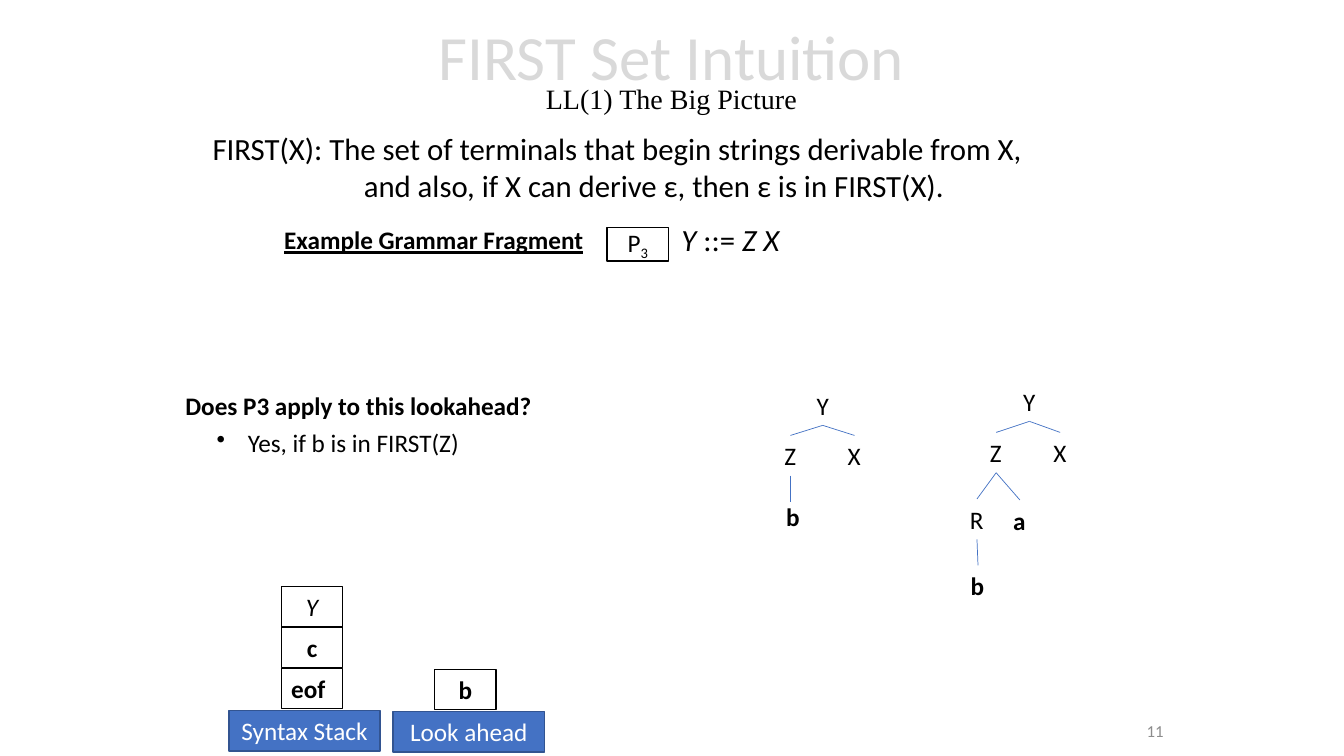
from dataclasses import dataclass

from lxml import etree
from pptx import Presentation
from pptx.dml.color import RGBColor
from pptx.enum.shapes import MSO_CONNECTOR, MSO_SHAPE
from pptx.enum.text import MSO_ANCHOR, MSO_AUTO_SIZE, PP_ALIGN
from pptx.oxml.ns import qn
from pptx.util import Inches, Pt

STRAIGHT = MSO_CONNECTOR.STRAIGHT
RECT = MSO_SHAPE.RECTANGLE
TOP, MIDDLE = MSO_ANCHOR.TOP, MSO_ANCHOR.MIDDLE
FIT, NO_FIT = MSO_AUTO_SIZE.SHAPE_TO_FIT_TEXT, MSO_AUTO_SIZE.NONE
LEFT, CENTER, RIGHT = PP_ALIGN.LEFT, PP_ALIGN.CENTER, PP_ALIGN.RIGHT
SIDE_TOP, SIDE_BOTTOM = 0, 2
ROW = 0.4


@dataclass(frozen=True)
class Theme:
    font: str = "Calibri"
    serif: str = "Times New Roman"
    ink: str = "000000"
    paper: str = "FFFFFF"
    accent: str = "4472C4"
    accent_dark: str = "325491"
    faded: str = "D9D9D9"
    muted: str = "8C8C8C"
    title: float = 45
    subtitle: float = 20
    lead: float = 22
    body: float = 18
    small: float = 12


class Deck:
    def __init__(self, theme):
        self.theme = theme
        self.prs = Presentation()
        self.prs.slide_width, self.prs.slide_height = Inches(13.33), Inches(7.5)

    def add_slide(self):
        self.slide = self.prs.slides.add_slide(self.prs.slide_layouts[5])

    def style(self, font, size, color, name=None, bold=False, italic=False):
        font.name, font.size = name or self.theme.font, Pt(size)
        font.color.rgb = RGBColor.from_string(color)
        font.bold, font.italic = bold, italic

    def title(self, heading, subheading, at):
        t = self.theme
        sp = self.slide.shapes.title
        sp.left, sp.top, sp.width, sp.height = map(Inches, at)
        tf = sp.text_frame
        tf.auto_size, tf.vertical_anchor = NO_FIT, MIDDLE
        p = tf.paragraphs[0]
        p.alignment, p.line_spacing = CENTER, 0.7
        r = p.add_run()
        r.text = heading
        self.style(r.font, t.title, t.faded)
        p.add_line_break()
        r = p.add_run()
        r.text = subheading
        self.style(r.font, t.subtitle, t.ink, t.serif)

    def text(self, text, at, size=None, color=None, bold=False, italic=False,
             align=LEFT, anchor=TOP, wrap=False, fit=True):
        t = self.theme
        sp = self.slide.shapes.add_textbox(*map(Inches, at))
        tf = sp.text_frame
        tf.text, tf.word_wrap, tf.vertical_anchor = text, wrap, anchor
        tf.auto_size = FIT if fit else NO_FIT
        for p in tf.paragraphs:
            p.alignment = align
            self.style(p.font, size or t.body, color or t.ink, bold=bold, italic=italic)
        return sp

    def bullet(self, text, at, indent):
        p = self.text(text, at).text_frame.paragraphs[0]
        pPr = p._p.get_or_add_pPr()
        pPr.set("marL", str(Inches(indent)))
        pPr.set("indent", str(-Inches(indent)))
        bullet = etree.Element(qn("a:buChar"), char="•")
        pPr.insert(0, bullet)

    def box(self, text, at, fill=None, line=None, color=None, bold=False,
            italic=False, align=CENTER, anchor=MIDDLE):
        t = self.theme
        sp = self.slide.shapes.add_shape(RECT, *map(Inches, at))
        sp.shadow.inherit = False
        sp.fill.solid()
        sp.fill.fore_color.rgb = RGBColor.from_string(fill or t.paper)
        sp.line.color.rgb = RGBColor.from_string(line or t.ink)
        sp.line.width = Pt(1)
        tf = sp.text_frame
        tf.text, tf.word_wrap, tf.vertical_anchor = text, True, anchor
        p = tf.paragraphs[0]
        p.alignment = align
        self.style(p.font, t.body, color or t.ink, bold=bold, italic=italic)
        return sp

    def branch(self, parent, child=None, end=(0, 0)):
        """Join a parent's bottom to a child's top, or to a free end point."""
        x, y = map(Inches, end)
        line = self.slide.shapes.add_connector(STRAIGHT, x, y, x, y)
        line.begin_connect(parent, SIDE_BOTTOM)
        if child is not None:
            line.end_connect(child, SIDE_TOP)
        line.line.color.rgb = RGBColor.from_string(self.theme.accent)
        line.line.width = Pt(0.5)
        etree.SubElement(line._element.spPr, qn("a:effectLst"))

    def tree(self, nodes, edges):
        """Draw symbols at (left, top, width); terminals are lower case and bold."""
        shapes = {symbol: self.text(symbol, (x, y, w, ROW), bold=symbol.islower())
                  for symbol, (x, y, w) in nodes.items()}
        for parent, child in edges:
            self.branch(shapes[parent], shapes[child])
        return shapes


def add_grammar(deck):
    t = deck.theme
    sp = deck.text("", (6.66, 2.14, 1.19, 0.47), size=t.lead)
    p = sp.text_frame.paragraphs[0]
    for part, italic in (("Y", True), (" ::= ", False), ("Z X", True)):
        r = p.add_run()
        r.text, r.font.italic = part, italic

    sp = deck.text("Example Grammar Fragment", (2.72, 2.18, 3.19, ROW), bold=True)
    sp.text_frame.paragraphs[0].font.underline = True

    sp = deck.box("P", (6.02, 2.26, 0.61, 0.33))
    r = sp.text_frame.paragraphs[0].add_run()
    r.text = "3"
    r._r.get_or_add_rPr().set("baseline", "-25000")


def add_parser_state(deck):
    t = deck.theme
    for label, x, y in (("Syntax Stack", 2.27, 7.05), ("Look ahead", 3.9, 7.06)):
        deck.box(label, (x, y, 1.5, ROW), t.accent, t.accent_dark, t.paper)
    for i, symbol in enumerate(("Y", "c")):
        deck.box(symbol, (2.79, 5.82 + i * ROW, 0.61, ROW),
                 bold=symbol.islower(), italic=symbol.isupper())
    deck.box("eof", (2.79, 6.63, 0.61, ROW), bold=True, align=LEFT, anchor=TOP)
    deck.box("b", (4.31, 6.64, 0.61, ROW), bold=True)


def add_trees(deck):
    short = deck.tree(
        {"Y": (8, 3.82, 0.32), "Z": (7.68, 4.32, 0.32), "X": (8.31, 4.32, 0.33),
         "b": (7.7, 4.92, 0.34)},
        ("YZ", "YX"))
    deck.branch(short["Z"], end=(7.84, 4.98))
    deck.tree(
        {"Y": (10.05, 3.78, 0.32), "Z": (9.72, 4.29, 0.32), "X": (10.35, 4.29, 0.33),
         "R": (9.52, 4.95, 0.34), "a": (9.95, 4.96, 0.33), "b": (9.53, 5.61, 0.34)},
        ("YZ", "YX", "ZR", "Za", "Rb"))


def main():
    t = Theme()
    deck = Deck(t)
    deck.add_slide()
    deck.title("FIRST Set Intuition", "LL(1) The Big Picture", (1.79, 0.03, 9.74, 1.45))
    deck.text("11", (9.39, 7.05, 2.25, ROW), t.small, t.muted,
              align=RIGHT, anchor=MIDDLE, wrap=True, fit=False)
    add_grammar(deck)
    add_parser_state(deck)
    deck.text("Does P3 apply to this lookahead?", (1.74, 3.82, 3.67, ROW), bold=True)
    deck.bullet("Yes, if b is in FIRST(Z)", (2.05, 4.19, 2.63, ROW), 0.31)
    add_trees(deck)
    sp = deck.text("FIRST(X): The set of terminals that begin strings derivable from X,\n"
                   "and also, if X can derive ε, then ε is in FIRST(X).",
                   (2.01, 1.24, 9.32, 0.84), t.lead, wrap=True)
    sp.text_frame.paragraphs[1]._p.get_or_add_pPr().set("marL", str(Inches(1.5)))
    deck.prs.save("out.pptx")


if __name__ == "__main__":
    main()
